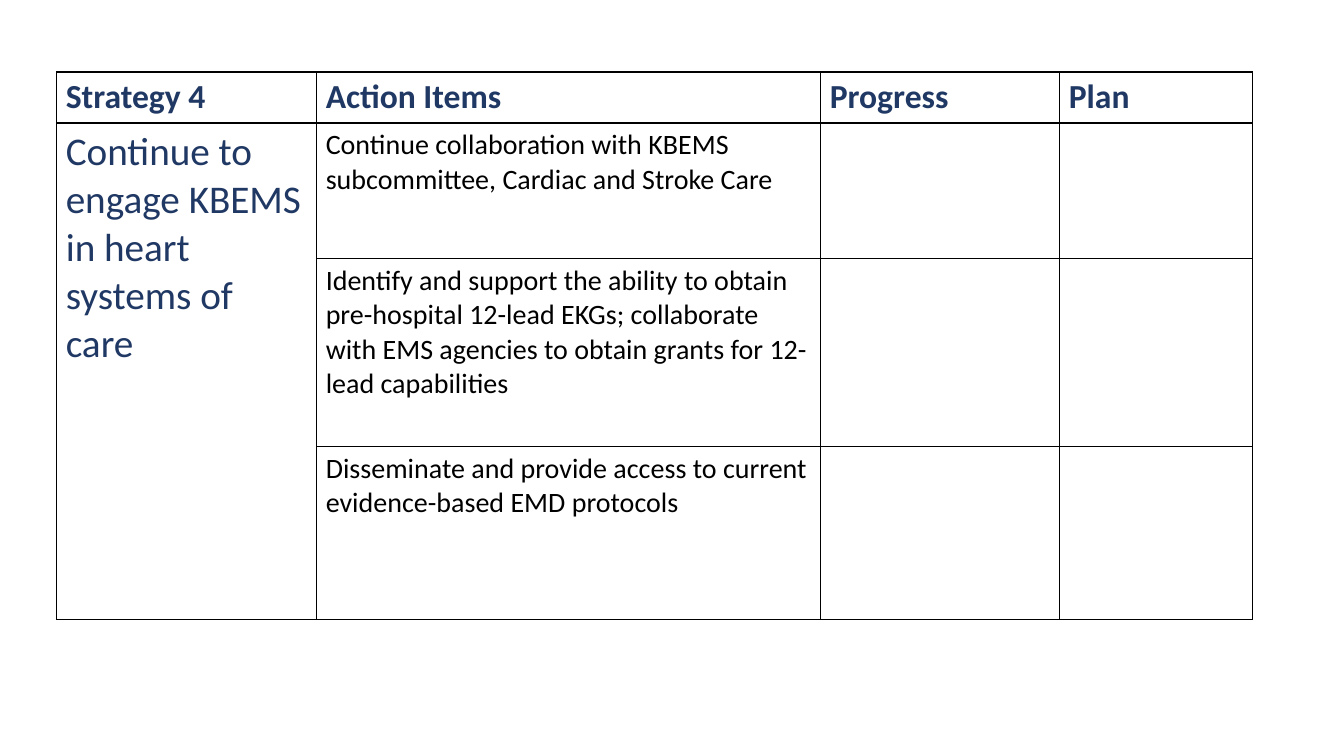
from dataclasses import dataclass

from lxml import etree
from pptx import Presentation
from pptx.dml.color import RGBColor
from pptx.oxml.ns import qn
from pptx.table import _Cell
from pptx.util import Pt

NAVY = RGBColor(0x20, 0x38, 0x64)
BLACK = RGBColor(0, 0, 0)
WHITE = RGBColor(0xFF, 0xFF, 0xFF)
FONT = "Calibri"

LEFT, TOP = 40.5, 51.4
COLUMN_WIDTHS = [185.7, 360, 170.8, 137.4]
ROW_HEIGHTS = [36.5, 97, 134, 123.5]
SIDE_MARGIN = 6.5
BORDER_WIDTH = 1


@dataclass(frozen=True)
class TextStyle:
    size: float
    color: RGBColor
    bold: bool = False


HEADER = TextStyle(24, NAVY, True)
STRATEGY = TextStyle(28, NAVY)
ACTION = TextStyle(20, BLACK)

HEADINGS = ["Strategy 4", "Action Items", "Progress", "Plan"]
STRATEGY_TEXT = "Continue to engage KBEMS in heart systems of care"
ACTIONS = [
    "Continue collaboration with KBEMS subcommittee, Cardiac and Stroke Care",
    "Identify and support the ability to obtain pre-hospital 12-lead EKGs; "
    "collaborate with EMS agencies to obtain grants for 12-lead capabilities",
    "Disseminate and provide access to current evidence-based EMD protocols",
]


def format_cell(cell: _Cell) -> None:
    """Give a cell its margins, black borders and white fill."""
    cell.margin_left = cell.margin_right = Pt(SIDE_MARGIN)
    tcPr = cell._tc.get_or_add_tcPr()
    for side in ("a:lnL", "a:lnR", "a:lnT", "a:lnB"):
        ln = etree.SubElement(tcPr, qn(side), w=str(Pt(BORDER_WIDTH)))
        fill = etree.SubElement(ln, qn("a:solidFill"))
        etree.SubElement(fill, qn("a:srgbClr"), val=str(BLACK))
    cell.fill.solid()
    cell.fill.fore_color.rgb = WHITE


def write_cell(cell: _Cell, text: str, style: TextStyle) -> None:
    p = cell.text_frame.paragraphs[0]
    p.text = text
    font = p.runs[0].font
    font.name = FONT
    font.size = Pt(style.size)
    font.bold = style.bold
    font.color.rgb = style.color


def main() -> None:
    prs = Presentation()
    prs.slide_width, prs.slide_height = Pt(960), Pt(540)
    s = prs.slides.add_slide(prs.slide_layouts[6])
    table = s.shapes.add_table(
        len(ROW_HEIGHTS), len(COLUMN_WIDTHS), Pt(LEFT), Pt(TOP),
        Pt(sum(COLUMN_WIDTHS)), Pt(sum(ROW_HEIGHTS))).table
    for column, width in zip(table.columns, COLUMN_WIDTHS):
        column.width = Pt(width)
    for row, height in zip(table.rows, ROW_HEIGHTS):
        row.height = Pt(height)

    for cell in table.iter_cells():
        format_cell(cell)
    table.cell(1, 0).merge(table.cell(len(ACTIONS), 0))

    for col, heading in enumerate(HEADINGS):
        write_cell(table.cell(0, col), heading, HEADER)
    write_cell(table.cell(1, 0), STRATEGY_TEXT, STRATEGY)
    for row, action in enumerate(ACTIONS, start=1):
        write_cell(table.cell(row, 1), action, ACTION)

    prs.save("out.pptx")


if __name__ == "__main__":
    main()
